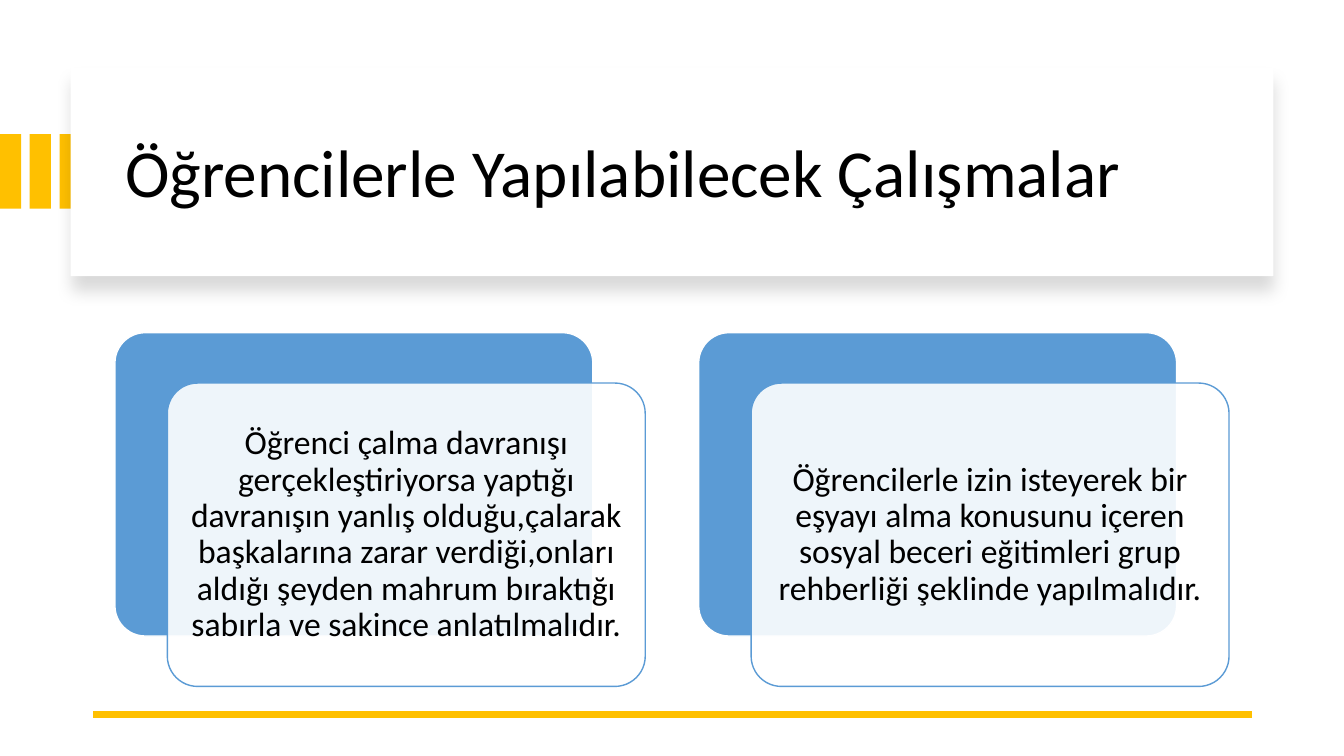
"""Build a slide on classroom work with students: a title panel and two text cards."""
from lxml import etree
from pptx import Presentation
from pptx.dml.color import RGBColor
from pptx.enum.shapes import MSO_CONNECTOR, MSO_SHAPE
from pptx.enum.text import MSO_ANCHOR, PP_ALIGN
from pptx.oxml import parse_xml
from pptx.oxml.ns import nsdecls, qn
from pptx.util import Inches, Pt

TITLE = "Öğrencilerle Yapılabilecek Çalışmalar"
CARDS = [
    "Öğrenci çalma davranışı gerçekleştiriyorsa yaptığı davranışın yanlış olduğu,"
    "çalarak başkalarına zarar verdiği,onları aldığı şeyden mahrum bıraktığı "
    "sabırla ve sakince anlatılmalıdır.",
    "Öğrencilerle izin isteyerek bir eşyayı alma konusunu içeren sosyal beceri "
    "eğitimleri grup rehberliği şeklinde yapılmalıdır.",
]
COLORS = {"gold": "FFC000", "blue": "5B9BD5", "white": "FFFFFF", "black": "000000"}
FONT = "Calibri"

STRIPE_COUNT, STRIPE_PITCH = 3, 0.295
CARD_LEFT, CARD_TOP, CARD_PITCH = 1.14, 3.3, 5.79
CARD_WIDTH, CARD_HEIGHT = 4.74, 3.01
OFFSET_X, OFFSET_Y = 0.52, 0.5


def color(name):
    return RGBColor.from_string(COLORS[name])


def add_box(slide, kind, left, top, width, height, fill, line=None):
    box = slide.shapes.add_shape(
        kind, Inches(left), Inches(top), Inches(width), Inches(height))
    box.shadow.inherit = False
    box.fill.solid()
    box.fill.fore_color.rgb = color(fill)
    if line:
        box.line.color.rgb = color(line)
        box.line.width = Pt(1)
    else:
        box.line.fill.background()
    return box


def write_text(shape, text, size, alignment):
    frame = shape.text_frame
    frame.word_wrap = True
    frame.vertical_anchor = MSO_ANCHOR.MIDDLE
    frame.text = text
    paragraph = frame.paragraphs[0]
    paragraph.alignment = alignment
    paragraph.line_spacing = 0.9
    paragraph.font.name = FONT
    paragraph.font.size = Pt(size)
    paragraph.font.color.rgb = color("black")


def add_panel(slide):
    panel = add_box(slide, MSO_SHAPE.RECTANGLE, 0.7, 0.67, 11.93, 2.07, "white")
    effects = panel.element.spPr.find(qn("a:effectLst"))
    effects.append(parse_xml(
        f'<a:outerShdw {nsdecls("a")} blurRad="{Pt(11)}" dist="{Pt(10)}" '
        'dir="5400000" algn="t" rotWithShape="0">'
        f'<a:srgbClr val="{COLORS["black"]}"><a:alpha val="15000"/></a:srgbClr>'
        '</a:outerShdw>'))


def add_title(slide):
    title = slide.shapes.title
    title.left, title.top = Inches(1.14), Inches(0.89)
    title.width, title.height = Inches(11.13), Inches(1.7)
    write_text(title, TITLE, 48, PP_ALIGN.LEFT)
    title.element.getparent().append(title.element)


def add_rule(slide):
    rule = slide.shapes.add_connector(
        MSO_CONNECTOR.STRAIGHT, Inches(12.42), Inches(7.09), Inches(0.92), Inches(7.09))
    rule.line.color.rgb = color("gold")
    rule.line.width = Pt(4.5)
    etree.SubElement(rule.element.spPr, qn("a:effectLst"))


def add_card(slide, left, text):
    size = (CARD_WIDTH, CARD_HEIGHT)
    kind = MSO_SHAPE.ROUNDED_RECTANGLE
    back = add_box(slide, kind, left, CARD_TOP, *size, "blue", "white")
    front = add_box(
        slide, kind, left + OFFSET_X, CARD_TOP + OFFSET_Y, *size, "white", "blue")
    for box in (back, front):
        box.adjustments[0] = 0.1
    fill_color = front.element.spPr.find(qn("a:solidFill"))[0]
    etree.SubElement(fill_color, qn("a:alpha"), val="90000")
    write_text(front, text, 24, PP_ALIGN.CENTER)
    frame = front.text_frame
    frame.margin_left = frame.margin_right = Inches(0.1)
    frame.margin_top = frame.margin_bottom = Inches(0.1)


def main():
    presentation = Presentation()
    presentation.slide_width, presentation.slide_height = Inches(13.33), Inches(7.5)
    slide = presentation.slides.add_slide(presentation.slide_layouts[5])
    for index in range(STRIPE_COUNT):
        add_box(slide, MSO_SHAPE.RECTANGLE,
                index * STRIPE_PITCH, 1.33, 0.21, 0.74, "gold")
    add_panel(slide)
    add_title(slide)
    add_rule(slide)
    for index, text in enumerate(CARDS):
        add_card(slide, CARD_LEFT + index * CARD_PITCH, text)
    presentation.save("out.pptx")


if __name__ == "__main__":
    main()
